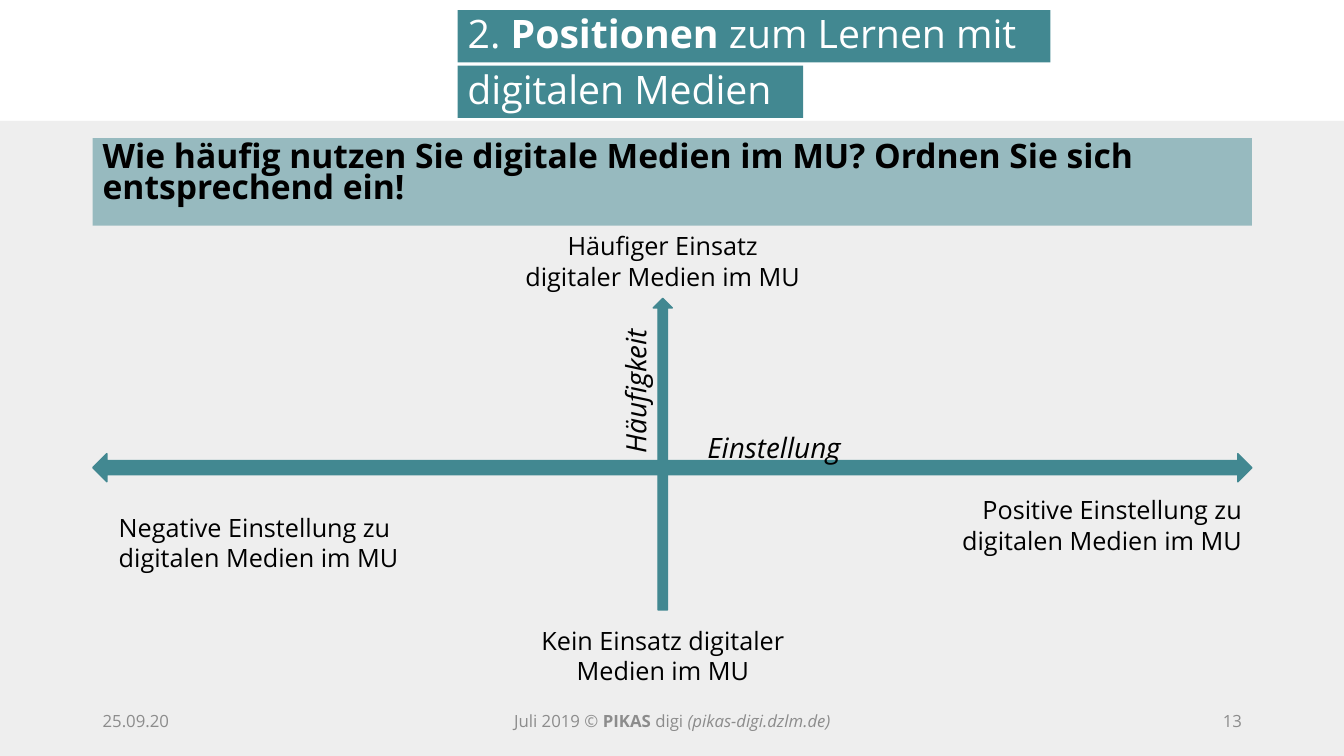
from lxml import etree
from pptx import Presentation
from pptx import util as u
from pptx.dml.color import RGBColor
from pptx.enum import shapes, text
from pptx.oxml.ns import qn

COLORS = {"teal": "428891", "panel": "EEEEEE", "grey": "8C8C8C",
          "black": "000000", "white": "FFFFFF"}
FONT = "Open Sans"
WIDTH, HEIGHT = u.Inches(13.333), u.Inches(7.5)
LEFT, CENTER, RIGHT = text.PP_ALIGN.LEFT, text.PP_ALIGN.CENTER, text.PP_ALIGN.RIGHT
TOP, MIDDLE = text.MSO_ANCHOR.TOP, text.MSO_ANCHOR.MIDDLE
MARGIN, CONTENT = 6.9, 86.25


def rgb(name):
    return RGBColor.from_string(COLORS[name])


def box(x, y, w, h):
    return [int(size * share / 100)
            for size, share in zip((WIDTH, HEIGHT, WIDTH, HEIGHT), (x, y, w, h))]


def paint(sp, color, opacity=100):
    sp.fill.solid()
    sp.fill.fore_color.rgb = rgb(color)
    if opacity < 100:
        clr = sp.fill._xPr.find(".//" + qn("a:srgbClr"))
        etree.SubElement(clr, qn("a:alpha")).set("val", str(opacity * 1000))


def write(sp, runs, size, color="black", align=LEFT, anchor=TOP, spacing=None):
    tf = sp.text_frame
    tf.word_wrap = True
    tf.auto_size = text.MSO_AUTO_SIZE.NONE
    tf.vertical_anchor = anchor
    p = tf.paragraphs[0]
    p.alignment = align
    p.space_before = u.Pt(0)
    if spacing:
        p.line_spacing = spacing
    for content, style in runs:
        r = p.add_run()
        r.text = content
        r.font.name = FONT
        r.font.size = u.Pt(size)
        r.font.color.rgb = rgb(color)
        r.font.bold = style == "bold"
        r.font.italic = style == "italic"


def add_block(s, area, color, kind=shapes.MSO_SHAPE.RECTANGLE, opacity=100):
    sp = s.shapes.add_shape(kind, *box(*area))
    sp.shadow.inherit = False
    paint(sp, color, opacity)
    sp.line.fill.background()
    return sp


def add_axis(s, area, kind):
    sp = add_block(s, area, "teal", kind)
    sp.line.color.rgb = rgb("teal")
    sp.line.width = u.Pt(1)


def add_label(s, area, runs, size=18, rotation=0, **style):
    sp = s.shapes.add_textbox(*box(*area))
    sp.rotation = rotation
    write(sp, runs, size, **style)


def add_heading(s):
    title = s.shapes.title
    title.left, title.top, title.width, title.height = box(34.05, 1.33, 44.1, 6.93)
    paint(title, "teal")
    second = add_block(s, (34.05, 8.67, 25.72, 6.93), "teal")
    lines = [(title, [("2. ", ""), ("Positionen", "bold"), (" zum Lernen mit", "")]),
             (second, [("digitalen Medien", "")])]
    for sp, runs in lines:
        write(sp, runs, 28, "white", anchor=MIDDLE, spacing=0.9)


def add_footer(s):
    copyright_runs = [("Juli 2019 © ", ""), ("PIKAS", "bold"), (" digi ", ""),
                      ("(pikas-digi.dzlm.de)", "italic")]
    for x, w, runs, align in [(MARGIN, 22.5, [("25.09.20", "")], LEFT),
                              (33.15, 33.75, copyright_runs, CENTER),
                              (70.65, 22.5, [("13", "")], RIGHT)]:
        add_label(s, (x, 92.67, w, 5.33), runs, 12,
                  color="grey", align=align, anchor=MIDDLE)


def main():
    prs = Presentation()
    prs.slide_width, prs.slide_height = WIDTH, HEIGHT
    s = prs.slides.add_slide(prs.slide_layouts[5])
    add_block(s, (0, 16, 100, 84), "panel")
    add_footer(s)
    question = add_block(s, (MARGIN, 18.27, CONTENT, 11.6), "teal", opacity=50)
    write(question, [("Wie häufig nutzen Sie digitale Medien im MU? "
                      "Ordnen Sie sich entsprechend ein!", "bold")], 24, spacing=0.78)

    add_axis(s, (MARGIN, 60, CONTENT, 3.73), shapes.MSO_SHAPE.LEFT_RIGHT_ARROW)
    add_axis(s, (48.6, 39.47, 1.42, 41.2), shapes.MSO_SHAPE.UP_ARROW)
    for x, y, name, rotation in [(51.9, 56.27, "Einstellung", 0),
                                 (41.1, 47.2, "Häufigkeit", 270)]:
        add_label(s, (x, y, 12.45, 6), [(name, "italic")], 20, rotation)
    for x, y, w, caption, align in [
            (38.25, 29.87, 22.12, "Häufiger Einsatz digitaler Medien im MU", CENTER),
            (68.93, 64.8, 24.22, "Positive Einstellung zu digitalen Medien im MU", RIGHT),
            (8.1, 67.07, 24.22, "Negative Einstellung zu digitalen Medien im MU", LEFT),
            (39.53, 82, 19.58, "Kein Einsatz digitaler Medien im MU", CENTER)]:
        add_label(s, (x, y, w, 9.47), [(caption, "")], align=align)

    add_heading(s)
    prs.save("out.pptx")


if __name__ == "__main__":
    main()
